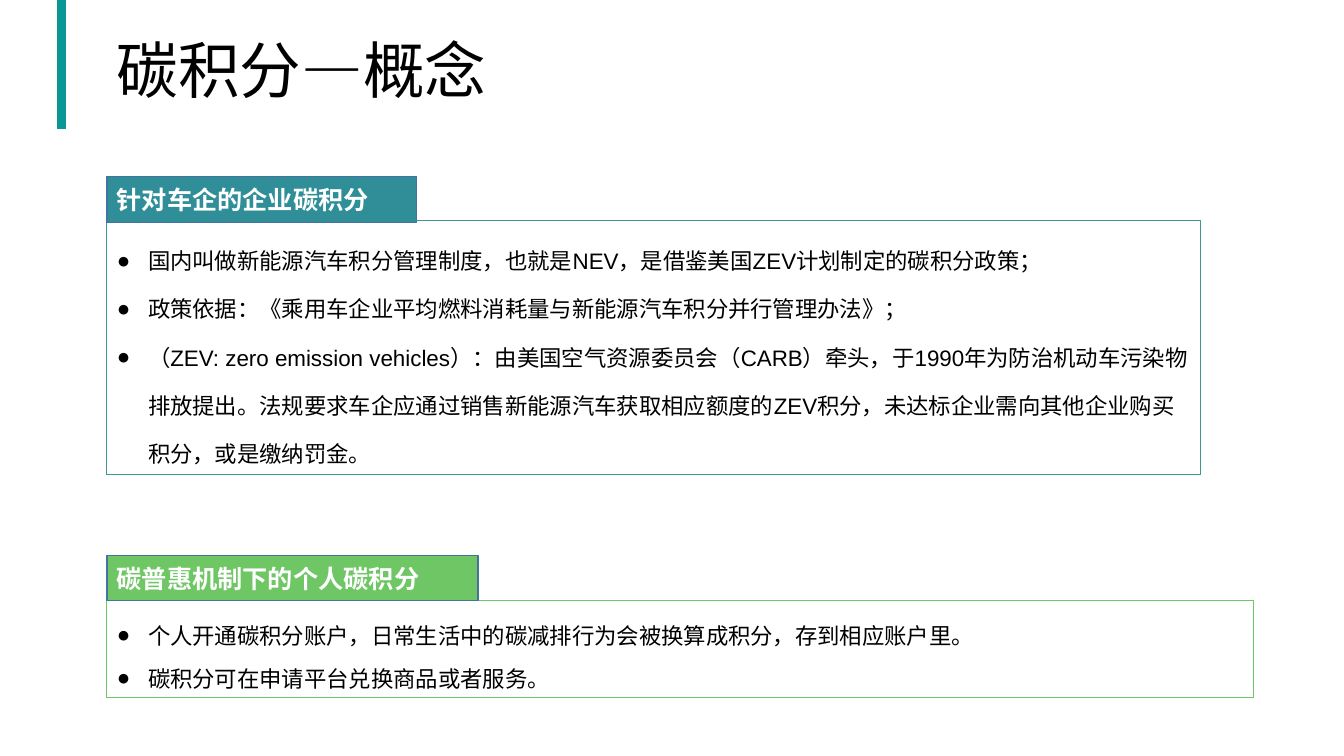
from dataclasses import dataclass

from lxml.etree import SubElement
from pptx import Presentation
from pptx.dml.color import RGBColor
from pptx.enum.lang import MSO_LANGUAGE_ID
from pptx.enum.shapes import MSO_CONNECTOR, MSO_SHAPE
from pptx.enum.text import MSO_ANCHOR, MSO_AUTO_SIZE, PP_ALIGN
from pptx.oxml.ns import qn
from pptx.util import Inches, Pt


@dataclass(frozen=True)
class Theme:
    accent: str = "0B9796"
    teal: str = "308E98"
    teal_edge: str = "39998D"
    green: str = "6FC665"
    tab_edge: str = "43739E"
    ink: str = "000000"
    paper: str = "FFFFFF"
    title_font: str = "Calibri"
    body_font: str = "Arial"
    title_size: int = 44
    tab_size: int = 18
    body_size: int = 16
    accent_width: float = 6
    tab_width: float = 1
    panel_width: float = 0.75
    bullet: str = "●"
    indent: float = 0.31


@dataclass(frozen=True)
class Section:
    heading: str
    tab: tuple
    panel: tuple
    fill: str
    edge: str
    spacing: float
    points: tuple


class SlideBuilder:
    def __init__(self, deck, theme):
        self.deck = deck
        self.theme = theme
        self.page = deck.slides.add_slide(deck.slide_layouts[6])

    def across(self, percent):
        return round(self.deck.slide_width * percent / 100)

    def down(self, percent):
        return round(self.deck.slide_height * percent / 100)

    def area(self, place):
        left, top, width, height = place
        return self.across(left), self.down(top), self.across(width), self.down(height)

    def rule(self, x, top, bottom):
        line = self.page.shapes.add_connector(
            MSO_CONNECTOR.STRAIGHT,
            self.across(x), self.down(top), self.across(x), self.down(bottom))
        line.line.color.rgb = RGBColor.from_string(self.theme.accent)
        line.line.width = Pt(self.theme.accent_width)
        SubElement(line._element.spPr, qn("a:effectLst"))

    def rectangle(self, place, edge, width, fill=None):
        box = self.page.shapes.add_shape(MSO_SHAPE.RECTANGLE, *self.area(place))
        box.shadow.inherit = False
        if fill:
            box.fill.solid()
            box.fill.fore_color.rgb = RGBColor.from_string(fill)
        else:
            box.fill.background()
        box.line.color.rgb = RGBColor.from_string(edge)
        box.line.width = Pt(width)
        box.text_frame.word_wrap = True
        return box

    def add_text(self, para, text, font, size, color, bold=False):
        para.alignment = PP_ALIGN.LEFT
        span = para.add_run()
        span.text = text
        span.font.name = font
        span.font.size = Pt(size)
        span.font.bold = bold
        span.font.color.rgb = RGBColor.from_string(color)
        span.font.language_id = MSO_LANGUAGE_ID.SIMPLIFIED_CHINESE

    def title(self, place, text):
        frame = self.page.shapes.add_textbox(*self.area(place)).text_frame
        frame.word_wrap = True
        frame.vertical_anchor = MSO_ANCHOR.MIDDLE
        para = frame.paragraphs[0]
        para.line_spacing = 0.9
        self.add_text(para, text, self.theme.title_font, self.theme.title_size, self.theme.ink)

    def bullet(self, para):
        properties = para._p.get_or_add_pPr()
        indent = Inches(self.theme.indent)
        properties.set("marL", str(indent))
        properties.set("indent", str(-indent))
        SubElement(properties, qn("a:buFont"), typeface=self.theme.body_font)
        SubElement(properties, qn("a:buChar"), char=self.theme.bullet)

    def panel(self, section):
        theme = self.theme
        frame = self.rectangle(section.panel, section.edge, theme.panel_width).text_frame
        frame.vertical_anchor = MSO_ANCHOR.TOP
        frame.auto_size = MSO_AUTO_SIZE.SHAPE_TO_FIT_TEXT
        for index, point in enumerate(section.points):
            para = frame.add_paragraph() if index else frame.paragraphs[0]
            self.bullet(para)
            para.line_spacing = section.spacing
            self.add_text(para, point, theme.body_font, theme.body_size, theme.ink)

    def tab(self, section):
        theme = self.theme
        box = self.rectangle(section.tab, theme.tab_edge, theme.tab_width, section.fill)
        box.text_frame.vertical_anchor = MSO_ANCHOR.MIDDLE
        self.add_text(box.text_frame.paragraphs[0], section.heading,
                      theme.body_font, theme.tab_size, theme.paper, bold=True)


def main():
    deck = Presentation()
    deck.slide_width = Inches(13.33)
    deck.slide_height = Inches(7.5)
    theme = Theme()
    margin = 7.95
    sections = (
        Section(
            "针对车企的企业碳积分",
            (margin, 23.33, 23.03, 6.13), (margin, 29.2, 81.4, 33.6),
            theme.teal, theme.teal_edge, 1.8,
            ("国内叫做新能源汽车积分管理制度，也就是NEV，是借鉴美国ZEV计划制定的碳积分政策；",
             "政策依据：《乘用车企业平均燃料消耗量与新能源汽车积分并行管理办法》；",
             "（ZEV: zero emission vehicles）：由美国空气资源委员会（CARB）牵头，"
             "于1990年为防治机动车污染物排放提出。法规要求车企应通过销售新能源汽车"
             "获取相应额度的ZEV积分，未达标企业需向其他企业购买积分，或是缴纳罚金。")),
        Section(
            "碳普惠机制下的个人碳积分",
            (margin, 73.47, 27.61, 6), (margin, 79.47, 85.3, 12.8),
            theme.green, theme.green, 1.6,
            ("个人开通碳积分账户，日常生活中的碳减排行为会被换算成积分，存到相应账户里。",
             "碳积分可在申请平台兑换商品或者服务。")),
    )
    builder = SlideBuilder(deck, theme)
    builder.rule(4.58, 0, 17.07)
    builder.title((margin, 2.13, 87.02, 15.07), "碳积分—概念")
    for section in sections:
        builder.panel(section)
        builder.tab(section)
    deck.save("out.pptx")


if __name__ == "__main__":
    main()
